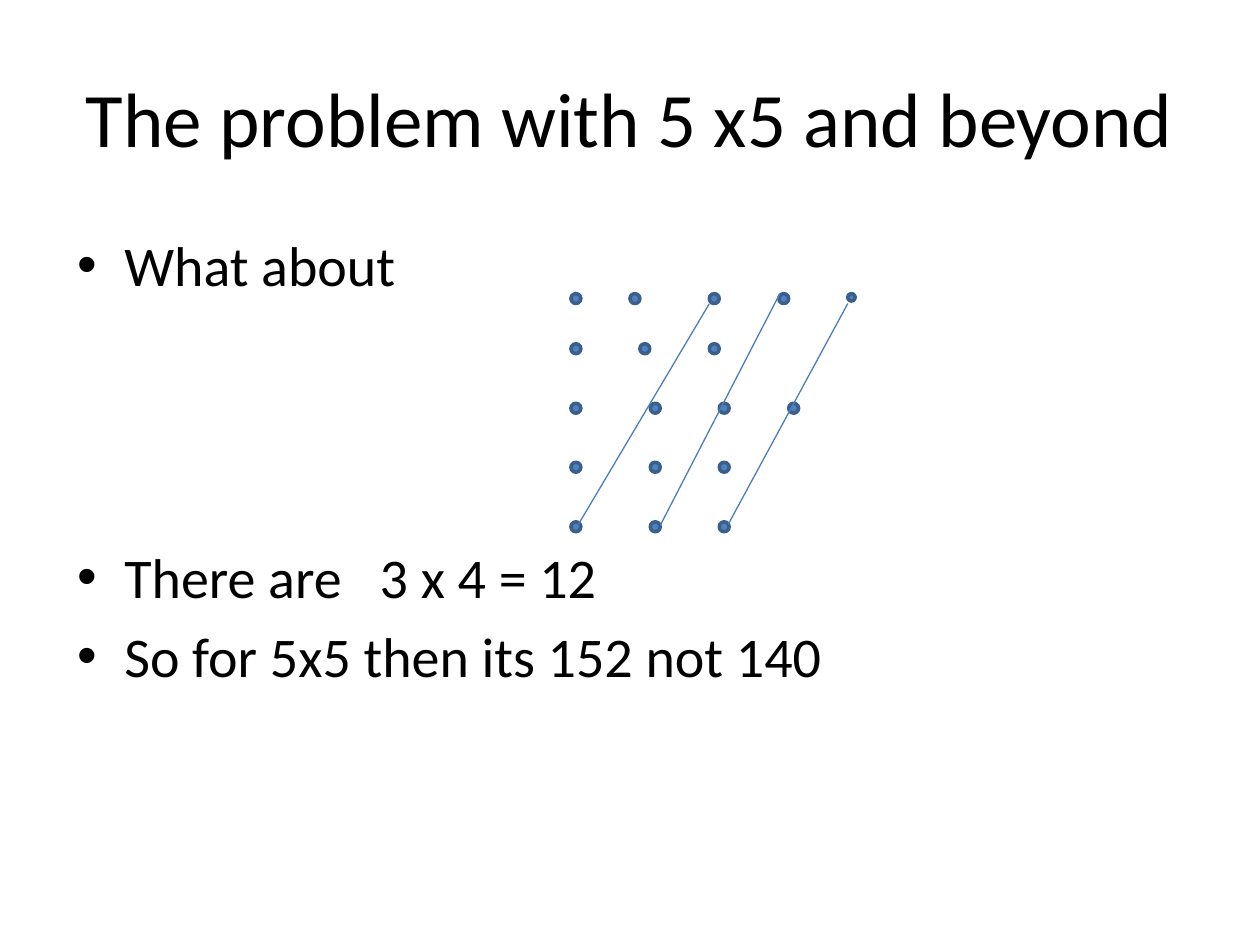
import pptx
import pptx.dml.color
import pptx.enum.shapes
import pptx.enum.text
import pptx.oxml
import pptx.util
from dataclasses import dataclass

Cm = pptx.util.Cm
Pt = pptx.util.Pt

FONT = "Calibri"
BLACK = "000000"
DOT_FILL = "4F81BD"
DOT_EDGE = "3A5F8C"
STROKE = "4B7EBC"
DOT_SIZE = 0.2
SMALL_DOT_SIZE = 0.15


@dataclass
class DotRow:
    top: float
    lefts: tuple[float, ...]


@dataclass
class Diagonal:
    start: tuple[float, float]
    end: tuple[float, float]


DOT_ROWS = [
    DotRow(5.92, (11.51, 12.7, 14.3, 15.7)),
    DotRow(6.93, (11.51, 12.9, 14.3)),
    DotRow(8.13, (11.51, 13.11, 14.5, 15.9)),
    DotRow(9.32, (11.51, 13.11, 14.5)),
    DotRow(10.52, (11.51, 13.11, 14.5)),
]
DIAGONALS = [
    Diagonal((11.66, 10.57), (14.3, 6.12)),
    Diagonal((13.31, 10.59), (15.72, 5.92)),
    Diagonal((14.68, 10.57), (17.09, 6.12)),
]
# Each point with its space before; None keeps the template's spacing.
POINTS = [
    ("What about", None),
    ("There are   3 x 4 = 12", Pt(140)),
    ("So for 5x5 then its 152 not 140", None),
]


def rgb(value: str) -> pptx.dml.color.RGBColor:
    return pptx.dml.color.RGBColor.from_string(value)


def place(holder, left: float, top: float, width: float, height: float) -> None:
    holder.left, holder.top = Cm(left), Cm(top)
    holder.width, holder.height = Cm(width), Cm(height)


def style(paragraph, size: int) -> None:
    paragraph.font.name = FONT
    paragraph.font.size = Pt(size)
    paragraph.font.color.rgb = rgb(BLACK)


def write_title(title) -> None:
    place(title, 1.27, 0.76, 22.86, 3.18)
    title.text_frame.text = "The problem with 5 x5 and beyond"
    heading = title.text_frame.paragraphs[0]
    heading.alignment = pptx.enum.text.PP_ALIGN.CENTER
    style(heading, 44)


def write_points(body) -> None:
    place(body, 1.3, 4.52, 22.86, 12.57)
    body.text_frame.text = "\n".join(text for text, _ in POINTS)
    for paragraph, (_, gap) in zip(body.text_frame.paragraphs, POINTS):
        style(paragraph, 32)
        if gap is not None:
            paragraph.space_before = gap


def draw_dot(slide, left: float, top: float, size: float = DOT_SIZE) -> None:
    dot = slide.shapes.add_shape(
        pptx.enum.shapes.MSO_SHAPE.OVAL, Cm(left), Cm(top), Cm(size), Cm(size))
    dot.shadow.inherit = False
    dot.fill.solid()
    dot.fill.fore_color.rgb = rgb(DOT_FILL)
    dot.line.color.rgb = rgb(DOT_EDGE)
    dot.line.width = Pt(2)


def draw_diagonal(slide, diagonal: Diagonal) -> None:
    stroke = slide.shapes.add_connector(
        pptx.enum.shapes.MSO_CONNECTOR.STRAIGHT,
        *map(Cm, diagonal.start), *map(Cm, diagonal.end))
    stroke.line.color.rgb = rgb(STROKE)
    stroke.line.width = Pt(0.75)
    stroke._element.spPr.append(pptx.oxml.parse_xml(
        '<a:effectLst xmlns:a="http://schemas.openxmlformats.org/drawingml/2006/main"/>'))


def main() -> None:
    deck = pptx.Presentation()
    deck.slide_width, deck.slide_height = Cm(25.4), Cm(19.05)
    slide = deck.slides.add_slide(deck.slide_layouts[1])
    write_title(slide.shapes.title)
    write_points(slide.placeholders[1])
    for row in DOT_ROWS:
        for left in row.lefts:
            draw_dot(slide, left, row.top)
    draw_dot(slide, 17.09, 5.92, SMALL_DOT_SIZE)
    for diagonal in DIAGONALS:
        draw_diagonal(slide, diagonal)
    deck.save("out.pptx")


if __name__ == "__main__":
    main()
